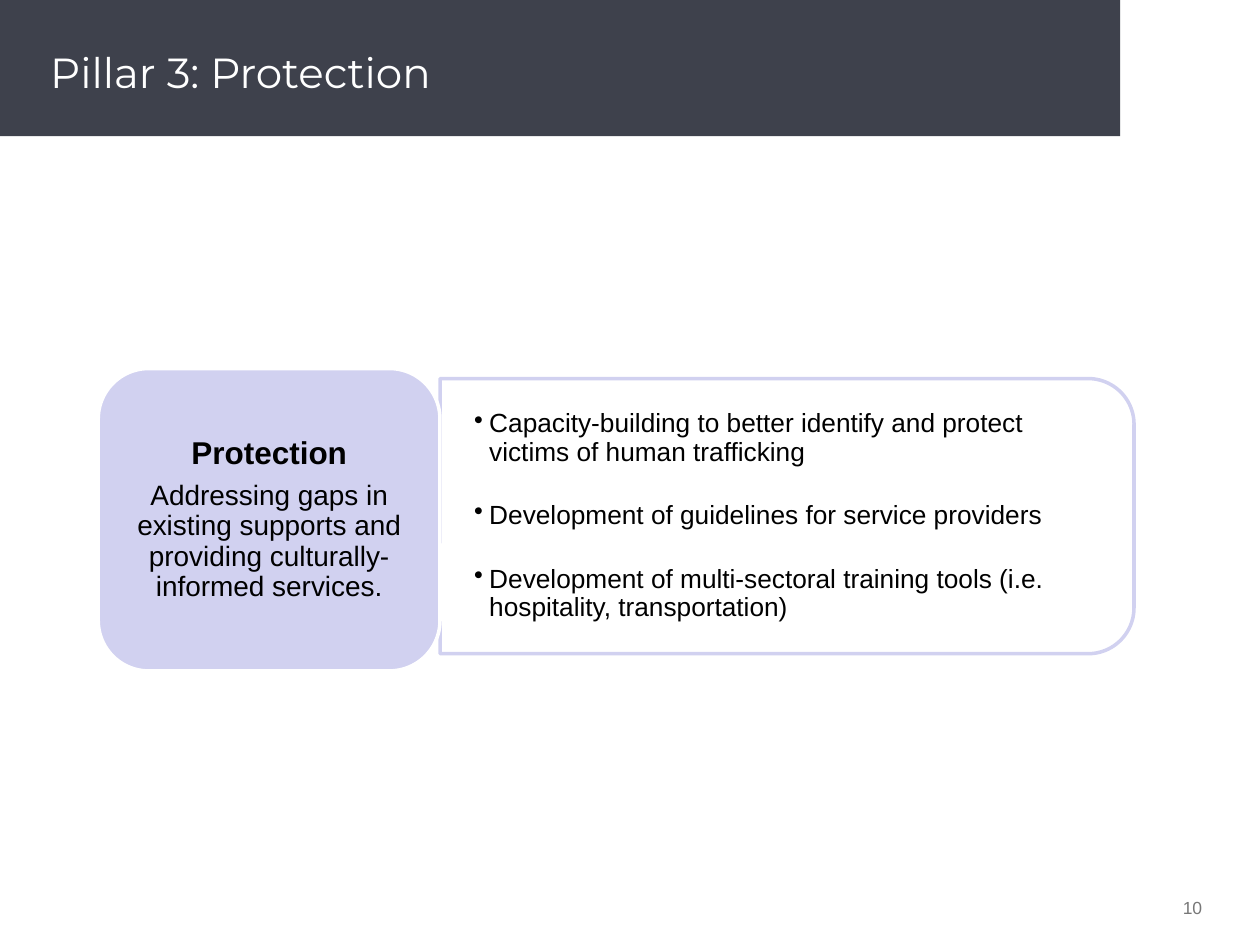
from collections import namedtuple

from lxml.etree import SubElement
from pptx import Presentation
from pptx.dml.color import RGBColor
from pptx.enum.shapes import MSO_SHAPE as Shape
from pptx.enum.text import MSO_ANCHOR as Anchor, PP_ALIGN as Align
from pptx.oxml.ns import qn
from pptx.util import Inches, Pt

Box = namedtuple("Box", "left top width height")
DARK, LILAC, WHITE, BLACK, GRAY = "3E414C", "D1D1F0", "FFFFFF", "000000", "777777"
LABEL = [
    ("Protection", {"size": Pt(18), "bold": True}),
    ("Addressing gaps in existing supports and providing culturally-informed services.",
     {"size": Pt(16)}),
]
ACTIONS = [
    "Capacity-building to better identify and protect victims of human trafficking",
    "Development of guidelines for service providers",
    "Development of multi-sectoral training tools (i.e. hospitality, transportation)",
]


def color(value):
    """Return the colour of a hex string."""
    return RGBColor.from_string(value)


def part(box, left, top, width, height):
    """Return the part of a box given by shares of its size."""
    return Box(box.left + left * box.width, box.top + top * box.height,
               width * box.width, height * box.height)


def inches(box):
    """Return the lengths of a box in slide units."""
    return [Inches(length) for length in box]


def set_values(target, values):
    """Set attributes of an object from a dict."""
    for name, value in values.items():
        setattr(target, name, value)


def add_panel(slide, kind, box, fill=None, line=None):
    """Add a preset shape with a plain fill and outline."""
    shape = slide.shapes.add_shape(kind, *inches(box))
    shape.shadow.inherit = False
    if fill:
        shape.fill.solid()
        shape.fill.fore_color.rgb = color(fill)
    else:
        shape.fill.background()
    if line:
        shape.line.color.rgb = color(line)
        shape.line.width = Pt(2)
    else:
        shape.line.fill.background()
    return shape


def add_text(slide, box, entries, ink, frame=None, layout=None, gap=0, bullet=False):
    """Add a text box with one paragraph for each text and its font values."""
    text_frame = slide.shapes.add_textbox(*inches(box)).text_frame
    set_values(text_frame, {"word_wrap": True, **(frame or {})})
    for index, (text, font) in enumerate(entries):
        paragraph = text_frame.add_paragraph() if index else text_frame.paragraphs[0]
        set_values(paragraph, layout or {})
        if index:
            paragraph.space_before = Pt(gap)
        if bullet:
            properties = paragraph._p.get_or_add_pPr()
            properties.set("marL", str(Inches(0.12)))
            properties.set("indent", str(-Inches(0.12)))
            SubElement(properties, qn("a:buChar"), char="•")
        run = paragraph.add_run()
        run.text = text
        set_values(run.font, {"name": "Arial", **font})
        run.font.color.rgb = color(ink)
    return text_frame


def add_header(slide, page):
    """Add the dark band and the shadowed title."""
    add_panel(slide, Shape.RECTANGLE, part(page, 0, 0, 0.889, 0.144), DARK)
    title = add_text(slide, part(page, 0.03, 0.015, 0.9, 0.122),
                     [("Pillar 3: Protection", {"name": "Montserrat", "size": Pt(24)})],
                     WHITE, {"vertical_anchor": Anchor.MIDDLE})
    properties = title.paragraphs[0].runs[0].font._element
    effects = properties.makeelement(qn("a:effectLst"), {})
    properties.find(qn("a:solidFill")).addnext(effects)
    shadow = SubElement(effects, qn("a:outerShdw"), blurRad="38100", dist="38100", dir="2700000")
    SubElement(shadow, qn("a:srgbClr"), val=BLACK)


def add_pillar(slide, box):
    """Add the label block and the list of actions beside it."""
    label = part(box, 0, 0, 0.33, 1)
    actions = part(box, 0.33, 0.033, 0.67, 0.91)
    turned = Box(actions.left + (actions.width - actions.height) / 2,
                 actions.top + (actions.height - actions.width) / 2,
                 actions.height, actions.width)
    add_panel(slide, Shape.ROUND_2_SAME_RECTANGLE, turned, line=LILAC).rotation = 90
    frame = {"vertical_anchor": Anchor.MIDDLE}
    wide = {"margin_left": Inches(0.27), "margin_right": Inches(0.27),
            "margin_top": Inches(0.14), "margin_bottom": Inches(0.14)}
    add_text(slide, part(actions, 0, 0.05, 0.98, 0.9),
             [(text, {"size": Pt(15)}) for text in ACTIONS], BLACK,
             {**frame, **wide}, {"line_spacing": 0.9}, gap=20, bullet=True)
    add_panel(slide, Shape.ROUNDED_RECTANGLE, label, LILAC, WHITE)
    narrow = {"margin_left": Inches(0.07), "margin_right": Inches(0.07)}
    add_text(slide, part(label, 0.04, 0.05, 0.92, 0.9), LABEL, BLACK, {**frame, **narrow},
             {"alignment": Align.CENTER, "line_spacing": 0.9}, gap=6)


def add_page_number(slide, box):
    """Add the slide number at the right of a box."""
    add_text(slide, box, [("10", {"size": Pt(10)})], GRAY, layout={"alignment": Align.RIGHT})


def main():
    """Build and save the slide."""
    presentation = Presentation()
    page = Box(0, 0, 10, 7.5)
    set_values(presentation, {"slide_width": Inches(page.width),
                              "slide_height": Inches(page.height)})
    slide = presentation.slides.add_slide(presentation.slide_layouts[6])
    add_header(slide, page)
    add_pillar(slide, part(page, 0.078, 0.39, 0.822, 0.32))
    add_page_number(slide, part(page, 0.731, 0.943, 0.233, 0.037))
    presentation.save("out.pptx")


if __name__ == "__main__":
    main()
